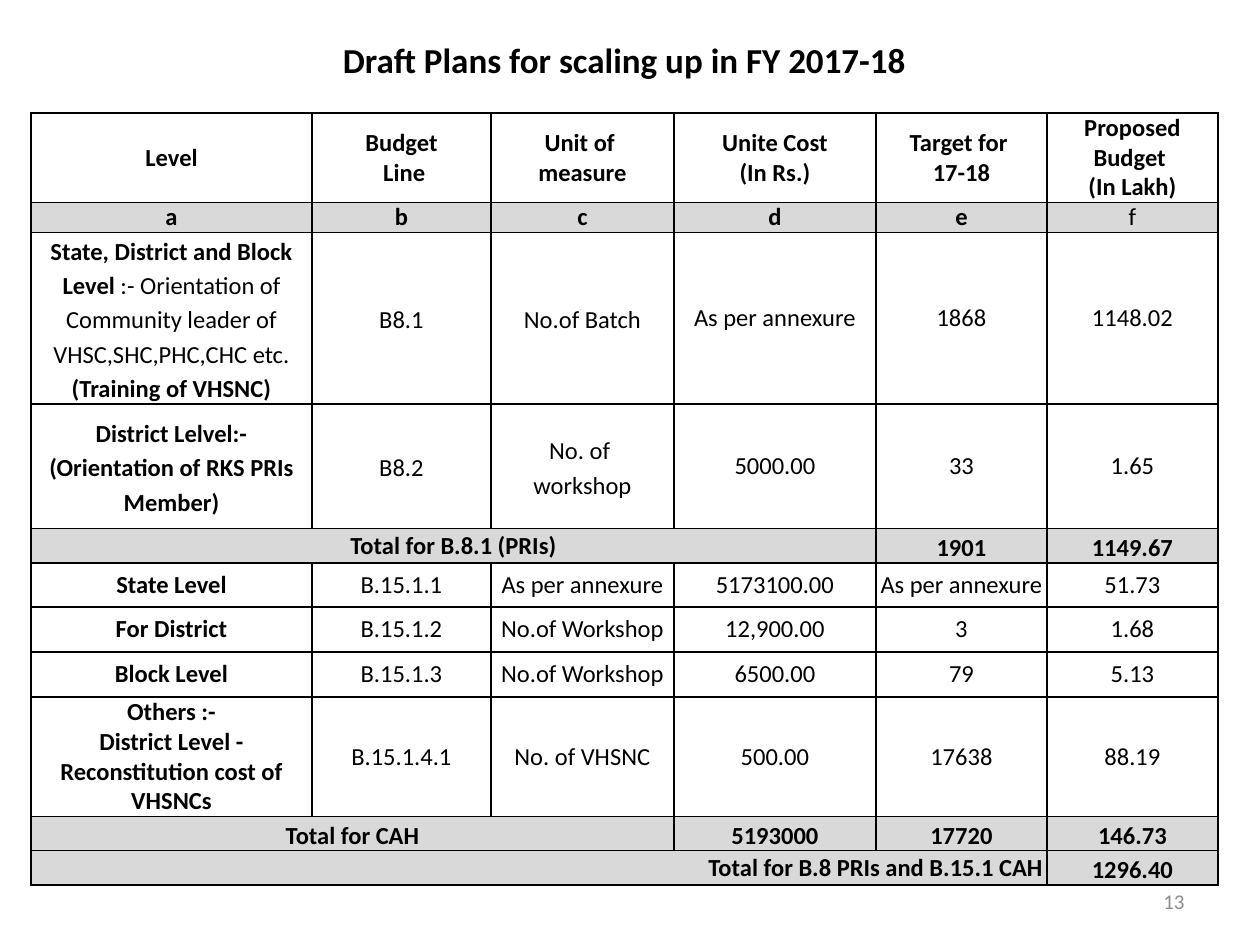
from lxml.etree import SubElement
from pptx import Presentation
from pptx.dml.color import RGBColor
from pptx.enum.text import MSO_ANCHOR, PP_ALIGN
from pptx.oxml.ns import qn
from pptx.util import Emu, Pt

TITLE = "Draft Plans for scaling up in FY 2017-18"
PAGE_NUMBER = "13"

# Asterisks switch bold on and off; None continues the merged cell on its left.
ROWS = [
    ["*Level*", "*Budget\n Line*", "*Unit of \nmeasure*", "*Unite Cost\n(In Rs.)*",
     "*Target for \n17-18*", "*Proposed Budget \n(In Lakh)*"],
    ["*a*", "*b*", "*c*", "*d*", "*e*", "f"],
    ["*State, District and Block Level *:- Orientation of Community leader of "
     "VHSC,SHC,PHC,CHC etc. *(Training of VHSNC)*",
     "B8.1", "No.of Batch", "As per annexure", "1868", "1148.02"],
    ["*District Lelvel:-\n(Orientation of RKS PRIs Member)*", "B8.2",
     "No. of \nworkshop", "5000.00", "33", "1.65"],
    ["*Total for B.8.1 (PRIs)*", None, None, None, "*1901*", "*1149.67*"],
    ["*State Level*", "B.15.1.1", "As per annexure", "5173100.00", "As per annexure", "51.73"],
    ["*For District*", "B.15.1.2", "No.of Workshop", "12,900.00", "3", "1.68"],
    ["*Block Level*", "B.15.1.3", "No.of Workshop", "6500.00", "79", "5.13"],
    ["*Others :-\nDistrict Level - Reconstitution cost of VHSNCs*", "B.15.1.4.1",
     "No. of VHSNC", "500.00", "17638", "88.19"],
    ["*Total for CAH*", None, None, "*5193000*", "*17720*", "*146.73*"],
    ["*Total for B.8 PRIs and B.15.1 CAH*", None, None, None, None, "*1296.40*"],
]
COLUMN_WIDTHS = [281, 179, 183, 202, 171, 171]
ROW_HEIGHTS = [89, 29, 169, 125, 34, 44, 45, 45, 118, 34, 34]
SHADED_ROWS = {1, 4, 9, 10}
LOOSE_COLUMNS = {2: {0, 1, 2}, 3: {0, 1, 2}, 4: {4, 5}, 9: {0, 3, 4, 5}, 10: {5}}


def px(value):
    return Emu(round(value * 914400 / 126))


def color(value):
    return RGBColor.from_string(value)


def write(frame, text, size=14, fill="000000", align=PP_ALIGN.CENTER, spacing=1.0,
          anchor=MSO_ANCHOR.MIDDLE):
    frame.word_wrap = True
    frame.vertical_anchor = anchor
    bold = False
    for number, line in enumerate(text.split("\n")):
        paragraph = frame.add_paragraph() if number else frame.paragraphs[0]
        paragraph.alignment = align
        paragraph.line_spacing = spacing
        paragraph.space_before = Pt(0)
        for position, part in enumerate(line.split("*")):
            if position:
                bold = not bold
            if part:
                run = paragraph.add_run()
                run.text = part
                run.font.name = "Calibri"
                run.font.size = Pt(size)
                run.font.bold = bold
                run.font.color.rgb = color(fill)


def add_borders(cell):
    properties = cell._tc.get_or_add_tcPr()
    for index, side in enumerate(("a:lnL", "a:lnR", "a:lnT", "a:lnB")):
        line = SubElement(properties, qn(side), w=str(Pt(1)))
        solid = SubElement(line, qn("a:solidFill"))
        SubElement(solid, qn("a:srgbClr"), val="000000")
        properties.insert(index, line)


def add_budget_table(slide):
    frame = slide.shapes.add_table(len(ROWS), len(COLUMN_WIDTHS), px(31), px(113),
                                   px(sum(COLUMN_WIDTHS)), px(sum(ROW_HEIGHTS)))
    table = frame.table
    table.first_row = table.horz_banding = False
    for column, width in zip(table.columns, COLUMN_WIDTHS):
        column.width = px(width)
    for row, height in zip(table.rows, ROW_HEIGHTS):
        row.height = px(height)
    last_row = len(ROWS) - 1
    for r, texts in enumerate(ROWS):
        for c, text in enumerate(texts):
            cell = table.cell(r, c)
            cell.margin_left = cell.margin_right = px(4)
            cell.margin_top = cell.margin_bottom = 0
            add_borders(cell)
            cell.fill.solid()
            cell.fill.fore_color.rgb = color("D9D9D9" if r in SHADED_ROWS else "FFFFFF")
            cell.vertical_anchor = MSO_ANCHOR.MIDDLE
            if text is not None:
                right = r == last_row and c == 0
                write(cell.text_frame, text,
                      align=PP_ALIGN.RIGHT if right else PP_ALIGN.CENTER,
                      spacing=1.15 if c in LOOSE_COLUMNS.get(r, ()) else 1.0,
                      anchor=None)
        span = texts.count(None)
        if span:
            table.cell(r, 0).merge(table.cell(r, span))


def main():
    presentation = Presentation()
    presentation.slide_width, presentation.slide_height = px(1260), px(945)
    slide = presentation.slides.add_slide(presentation.slide_layouts[5])

    title = slide.shapes.title
    title.left, title.top, title.width, title.height = px(94), px(32), px(1061), px(55)
    write(title.text_frame, f"*{TITLE}*", size=20)

    add_budget_table(slide)

    number = slide.shapes.add_textbox(px(903), px(876), px(294), px(50))
    write(number.text_frame, PAGE_NUMBER, size=12, fill="8C8C8C", align=PP_ALIGN.RIGHT)

    presentation.save("out.pptx")


if __name__ == "__main__":
    main()
